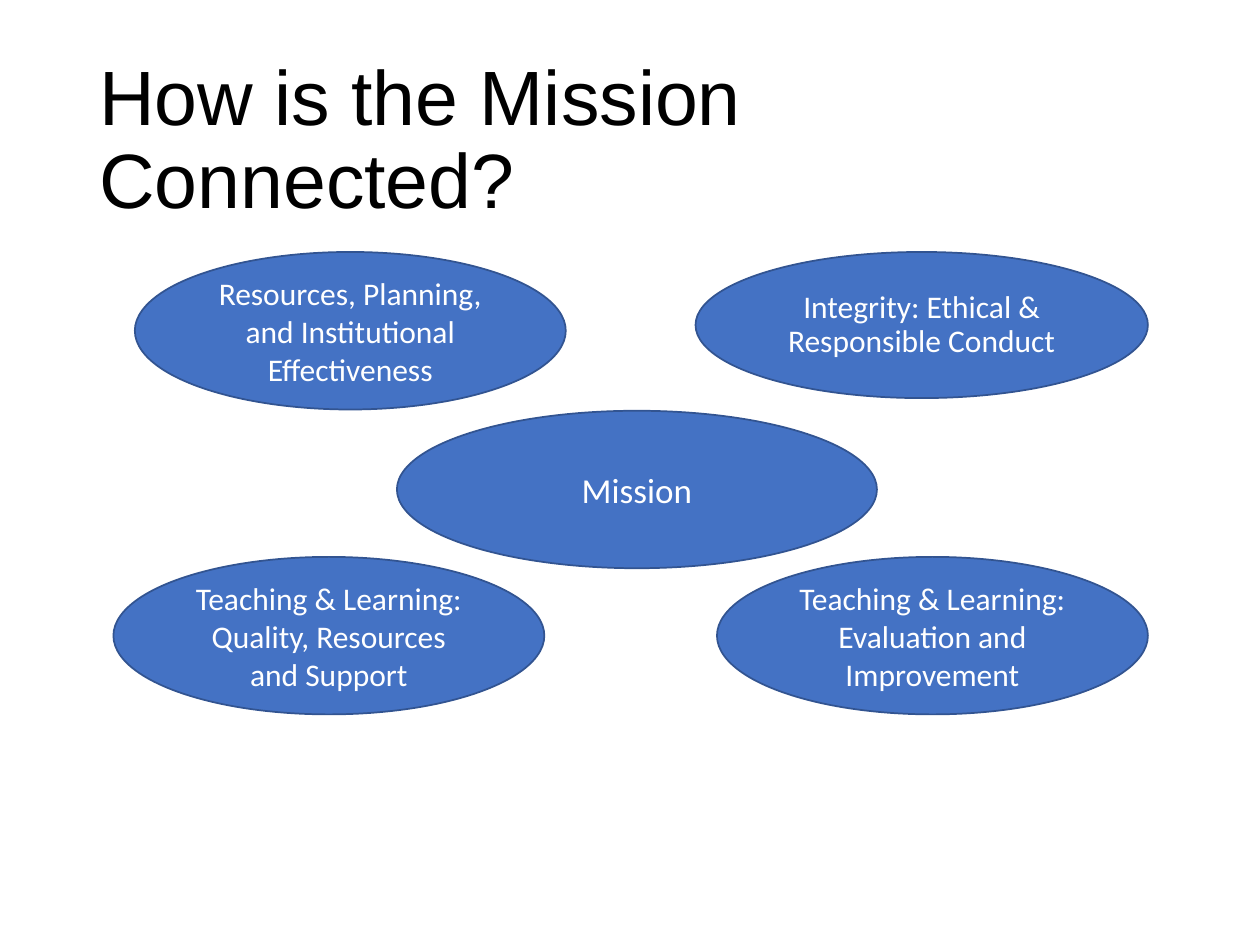
"""Build a slide of ovals that ties a central mission to four related themes."""
from pptx import Presentation
from pptx.dml.color import RGBColor
from pptx.enum.shapes import MSO_SHAPE
from pptx.enum.text import MSO_ANCHOR, PP_ALIGN
from pptx.util import Inches, Pt

OVAL = MSO_SHAPE.OVAL
MIDDLE = MSO_ANCHOR.MIDDLE
LEFT, CENTER = PP_ALIGN.LEFT, PP_ALIGN.CENTER

THEME = {
    "title_font": "Arial", "body_font": "Calibri",
    "title_size": 44, "mission_size": 20, "theme_size": 18,
    "ink": "000000", "paper": "FFFFFF", "fill": "4472C4", "line": "325491",
}

SLIDE_WIDTH, SLIDE_HEIGHT = Inches(10), Inches(7.5)
COLUMNS, ROWS = 100, 75
RIGHT_EDGE, TOP_ROW, BOTTOM_EDGE = 91.1, 20, 56.7
OVAL_WIDTH, OVAL_HEIGHT = 34.2, 12.5
INTEGRITY_WIDTH, INTEGRITY_HEIGHT = 35.9, 11.6
LOWER_ROW = BOTTOM_EDGE - OVAL_HEIGHT

TITLE = ("How is the Mission Connected?", (6.9, 4, 86.2, 14.5))
OVALS = [
    ("Mission", (31.5, 32.6, 38.1, OVAL_HEIGHT), "mission_size", 1),
    ("Resources, Planning, and Institutional Effectiveness",
     (10.7, TOP_ROW, OVAL_WIDTH, OVAL_HEIGHT), "theme_size", 1),
    ("Integrity: Ethical & Responsible Conduct",
     (RIGHT_EDGE - INTEGRITY_WIDTH, TOP_ROW, INTEGRITY_WIDTH, INTEGRITY_HEIGHT),
     "theme_size", 0.9),
    ("Teaching & Learning: Quality, Resources and Support",
     (9, LOWER_ROW, OVAL_WIDTH, OVAL_HEIGHT), "theme_size", 1),
    ("Teaching & Learning: Evaluation and Improvement",
     (RIGHT_EDGE - OVAL_WIDTH, LOWER_ROW, OVAL_WIDTH, OVAL_HEIGHT), "theme_size", 1),
]


def color(name):
    """Return a theme colour."""
    return RGBColor.from_string(THEME[name])


def place(cell):
    """Turn grid left, top, width and height into slide lengths."""
    left, top, width, height = cell
    column, row = SLIDE_WIDTH / COLUMNS, SLIDE_HEIGHT / ROWS
    return [round(length) for length in
            (left * column, top * row, width * column, height * row)]


def write(shape, text, *, font, size, ink, align, spacing):
    """Put one formatted paragraph in a shape."""
    frame = shape.text_frame
    frame.word_wrap = True
    frame.vertical_anchor = MIDDLE
    paragraph = frame.paragraphs[0]
    paragraph.text = text
    paragraph.alignment = align
    paragraph.line_spacing = spacing
    paragraph.font.name = THEME[font]
    paragraph.font.size = Pt(THEME[size])
    paragraph.font.color.rgb = color(ink)


def add_oval(slide, text, cell, size, spacing):
    """Draw one labelled oval."""
    shape = slide.shapes.add_shape(OVAL, *place(cell))
    shape.shadow.inherit = False
    shape.fill.solid()
    shape.fill.fore_color.rgb = color("fill")
    shape.line.color.rgb = color("line")
    shape.line.width = Pt(1)
    write(shape, text, font="body_font", size=size, ink="paper",
          align=CENTER, spacing=spacing)


def main():
    """Build and save the presentation."""
    presentation = Presentation()
    presentation.slide_width, presentation.slide_height = SLIDE_WIDTH, SLIDE_HEIGHT
    slide = presentation.slides.add_slide(presentation.slide_layouts[6])
    text, cell = TITLE
    write(slide.shapes.add_textbox(*place(cell)), text, font="title_font",
          size="title_size", ink="ink", align=LEFT, spacing=0.9)
    for oval in OVALS:
        add_oval(slide, *oval)
    presentation.save("out.pptx")


if __name__ == "__main__":
    main()
